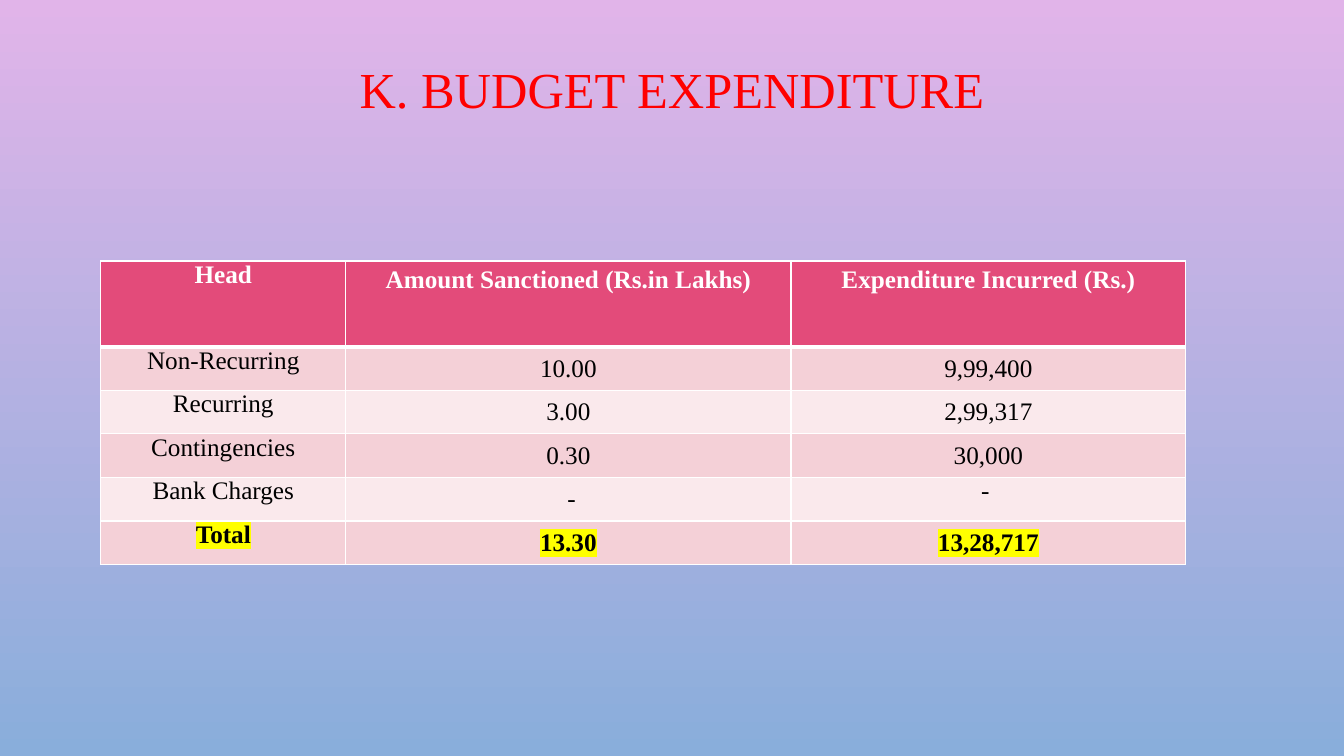
from dataclasses import dataclass

import lxml.etree
import pptx
import pptx.dml.color
import pptx.enum.text
import pptx.oxml.ns
import pptx.table
import pptx.text.text
import pptx.util

Pt = pptx.util.Pt
ALIGN = pptx.enum.text.PP_ALIGN
ANCHOR = pptx.enum.text.MSO_ANCHOR

COLOURS = {
    "sky_top": "E1B4E9",
    "sky_bottom": "89AEDB",
    "title": "FF0000",
    "header": "E34B7A",
    "band_dark": "F4D0D7",
    "band_light": "FAE9EC",
    "white": "FFFFFF",
    "ink": "000000",
    "highlight": "FFFF00",
}
FONT = "Times New Roman"
COLUMN_WIDTHS = (175, 318, 282)
HEADER_HEIGHT, ROW_HEIGHT = 61.2, 31.1
TIGHT = {"margin_left": Pt(5), "margin_right": Pt(5), "margin_top": Pt(0), "margin_bottom": Pt(0)}


@dataclass
class BudgetRow:
    head: str
    sanctioned: str
    incurred: str
    bold: bool = False
    highlighted: bool = False


BUDGET = (
    BudgetRow("Head", "Amount Sanctioned (Rs.in Lakhs)", "Expenditure Incurred (Rs.)", bold=True),
    BudgetRow("Non-Recurring", "10.00", "9,99,400"),
    BudgetRow("Recurring", "3.00", "2,99,317"),
    BudgetRow("Contingencies", "0.30", "30,000"),
    BudgetRow("Bank Charges", " -", "- "),
    BudgetRow("Total", "13.30", "13,28,717", bold=True, highlighted=True),
)


def rgb(name: str) -> pptx.dml.color.RGBColor:
    return pptx.dml.color.RGBColor.from_string(COLOURS[name])


def apply(target: object, values: dict) -> None:
    """Set each attribute named in values on target."""
    for name, value in values.items():
        setattr(target, name, value)


def write(paragraph: pptx.text.text._Paragraph, text: str, size: float, colour: str,
          bold: bool = False) -> pptx.text.text._Run:
    paragraph.alignment = ALIGN.CENTER
    run = paragraph.add_run()
    run.text = text
    apply(run.font, {"name": FONT, "size": Pt(size), "bold": bold})
    run.font.color.rgb = rgb(colour)
    return run


def highlight(run: pptx.text.text._Run) -> None:
    qn = pptx.oxml.ns.qn
    mark = lxml.etree.Element(qn("a:highlight"))
    lxml.etree.SubElement(mark, qn("a:srgbClr"), val=COLOURS["highlight"])
    run._r.get_or_add_rPr().find(qn("a:solidFill")).addnext(mark)


def add_borders(cell: pptx.table._Cell, row_index: int) -> None:
    """Draw white cell borders, with a heavy rule under the header row."""
    qn = pptx.oxml.ns.qn
    widths = {"L": 1, "R": 1, "T": 3 if row_index == 1 else 1, "B": 3 if row_index == 0 else 1}
    properties = cell._tc.get_or_add_tcPr()
    for position, (side, width) in enumerate(widths.items()):
        border = lxml.etree.Element(qn(f"a:ln{side}"), w=str(int(Pt(width))))
        fill = lxml.etree.SubElement(border, qn("a:solidFill"))
        lxml.etree.SubElement(fill, qn("a:srgbClr"), val=COLOURS["white"])
        properties.insert(position, border)


def fill_row(table: pptx.table.Table, row_index: int, entry: BudgetRow) -> None:
    is_header = row_index == 0
    band = "header" if is_header else ("band_light", "band_dark")[row_index % 2]
    table.rows[row_index].height = Pt(HEADER_HEIGHT if is_header else ROW_HEIGHT)
    for column, text in enumerate((entry.head, entry.sanctioned, entry.incurred)):
        cell = table.cell(row_index, column)
        if column == 0 or not is_header:
            apply(cell, TIGHT)
        at_top = is_header or column == 0 or text.startswith("-")
        cell.vertical_anchor = ANCHOR.TOP if at_top else ANCHOR.MIDDLE
        cell.fill.solid()
        cell.fill.fore_color.rgb = rgb(band)
        add_borders(cell, row_index)
        run = write(cell.text_frame.paragraphs[0], text, 18,
                    "white" if is_header else "ink", entry.bold)
        if entry.highlighted:
            highlight(run)


def main() -> None:
    deck = pptx.Presentation()
    apply(deck, {"slide_width": Pt(960), "slide_height": Pt(540)})
    slide = deck.slides.add_slide(deck.slide_layouts[5])

    sky = slide.background.fill
    sky.gradient()
    sky.gradient_angle = 270
    for stop, colour, position in zip(sky.gradient_stops, ("sky_top", "sky_bottom"), (0, 1)):
        stop.color.rgb = rgb(colour)
        stop.position = position

    title = slide.shapes.title
    apply(title, {"left": Pt(72), "top": Pt(4.3), "width": Pt(816), "height": Pt(122.4)})
    apply(title.text_frame, {"vertical_anchor": ANCHOR.MIDDLE, "word_wrap": True})
    heading = title.text_frame.paragraphs[0]
    heading.line_spacing = 0.9
    write(heading, "K. BUDGET EXPENDITURE", 36, "title")

    budget = slide.shapes.add_table(
        len(BUDGET), len(COLUMN_WIDTHS), Pt(72), Pt(186.5), Pt(sum(COLUMN_WIDTHS)),
        Pt(HEADER_HEIGHT + ROW_HEIGHT * (len(BUDGET) - 1))).table
    for column, width in zip(budget.columns, COLUMN_WIDTHS):
        column.width = Pt(width)
    for row_index, entry in enumerate(BUDGET):
        fill_row(budget, row_index, entry)

    deck.save("out.pptx")


if __name__ == "__main__":
    main()
